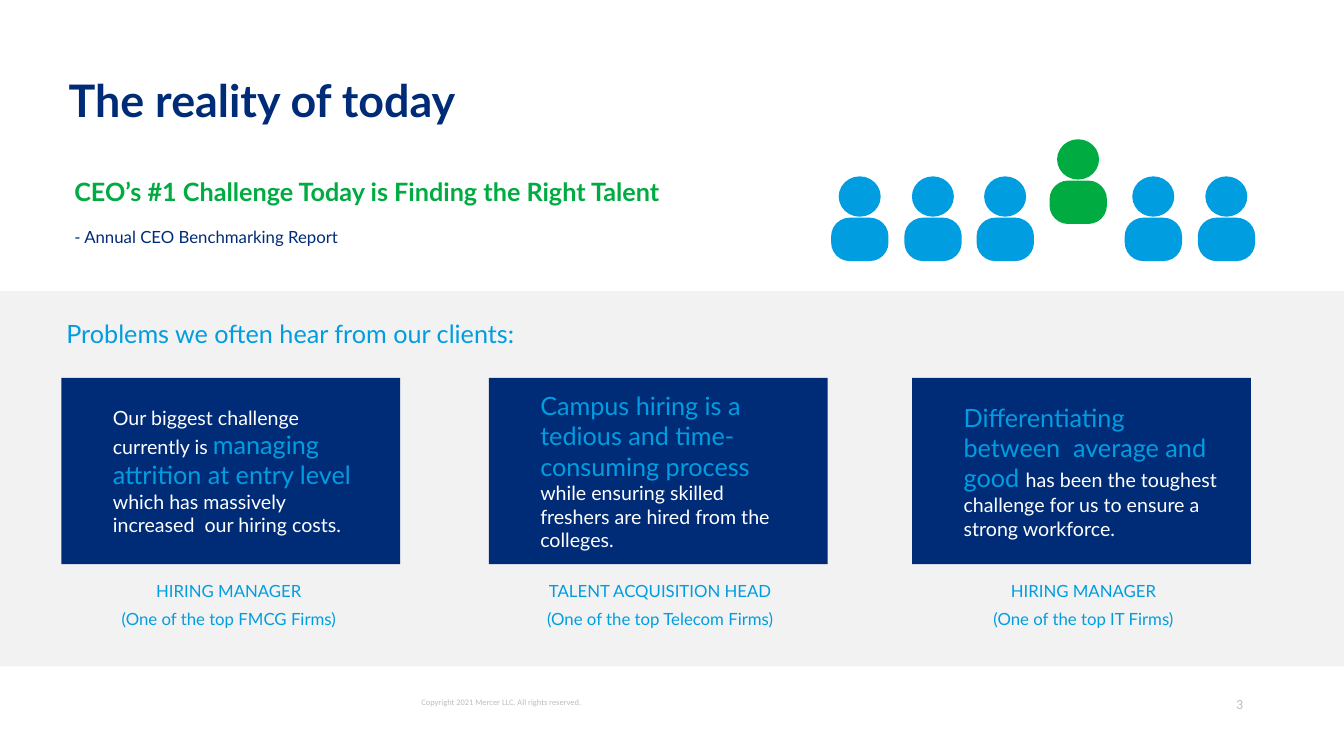
from pptx import Presentation
from pptx.dml.color import RGBColor
from pptx.enum.shapes import MSO_SHAPE
from pptx.enum.text import MSO_ANCHOR, PP_ALIGN
from pptx.util import Pt

RECT, ROUND, OVAL = MSO_SHAPE.RECTANGLE, MSO_SHAPE.ROUNDED_RECTANGLE, MSO_SHAPE.OVAL
TOP, MIDDLE = MSO_ANCHOR.TOP, MSO_ANCHOR.MIDDLE
LEFT, CENTER, RIGHT = PP_ALIGN.LEFT, PP_ALIGN.CENTER, PP_ALIGN.RIGHT


class Theme:
    navy, blue, green = "002C77", "009DE0", "00AC41"
    white, pale, grey = "FFFFFF", "F2F2F2", "B9BFC7"
    title, lead, body, label, page, legal = 32, 18, 14, 12, 10, 6
    font, small = "Lato", "Calibri"


def block(shapes, kind, box, color):
    shape = shapes.add_shape(kind, *map(Pt, box))
    shape.shadow.inherit = False
    shape.fill.solid()
    shape.fill.fore_color.rgb = RGBColor.from_string(color)
    shape.line.fill.background()
    return shape


def write(shape, paras, align=LEFT, gap=0, inset=(7.2, 3.6, 7.2, 3.6),
          anchor=TOP, font=Theme.font):
    """Fill a shape with paragraphs, each a list of (text, size, color, bold) runs."""
    frame = shape.text_frame
    frame.word_wrap = True
    frame.vertical_anchor = anchor
    frame.margin_left, frame.margin_top, frame.margin_right, frame.margin_bottom = map(Pt, inset)
    for i, runs in enumerate(paras):
        para = frame.add_paragraph() if i else frame.paragraphs[0]
        para.alignment = align
        para.space_before = Pt(gap if i else 0)
        for text, size, color, bold in runs:
            run = para.add_run()
            run.text = text
            run.font.name = font
            run.font.size = Pt(size)
            run.font.bold = bold
            run.font.color.rgb = RGBColor.from_string(color)


deck = Presentation()
deck.slide_width, deck.slide_height = Pt(960), Pt(540)
slide = deck.slides.add_slide(deck.slide_layouts[5])
shapes = slide.shapes
flush = (0, 0, 0, 0)

# Grey band and title
block(shapes, RECT, (0, 208, 960, 268), Theme.pale)
title = shapes.title
title.left, title.top, title.width, title.height = Pt(49), Pt(54), Pt(336), Pt(37)
write(title, [[("The reality of today", Theme.title, Theme.navy, True)]], inset=flush)
title.text_frame.paragraphs[0].line_spacing = Pt(36)

# Headings
claim = shapes.add_textbox(Pt(46), Pt(122.4), Pt(497.5), Pt(86))
write(claim, [
    [("CEO’s #1 Challenge Today is Finding the Right Talent", Theme.lead, Theme.green, True)],
    [("- Annual CEO Benchmarking Report", Theme.label, Theme.navy, False)],
], gap=14.4)
intro = shapes.add_textbox(Pt(40.3), Pt(224), Pt(389), Pt(22))
write(intro, [[("Problems we often hear from our clients:", Theme.lead, Theme.blue, False)]])

# Quotes: card left, caption left, runs (text, stressed), role, firm
quotes = [
    (43.9, 42.5,
     [("Our biggest challenge currently is ", False),
      ("managing attrition at entry level ", True),
      ("which has massively increased  our hiring costs.", False)],
     "HIRING MANAGER", "(One of the top FMCG Firms)"),
    (349.2, 350.6,
     [("Campus hiring is a tedious and time-consuming process ", True),
      ("while ensuring skilled freshers are hired from the colleges.", False)],
     "TALENT ACQUISITION HEAD", "(One of the top Telecom Firms)"),
    (651.6, 653,
     [("Differentiating between  average and good ", True),
      ("has been the toughest challenge for us to ensure a strong workforce.", False)],
     "HIRING MANAGER", "(One of the top IT Firms)"),
]
for left, under, parts, role, firm in quotes:
    card = block(shapes, RECT, (left, 270, 242, 133), Theme.navy)
    runs = [(text, Theme.lead, Theme.blue, False) if key
            else (text, Theme.body, Theme.white, False) for text, key in parts]
    write(card, [runs], inset=(36.7, 3.6, 22.3, 3.6), anchor=MIDDLE)
    label = shapes.add_textbox(Pt(under), Pt(411), Pt(242), Pt(67))
    write(label, [[(text, Theme.label, Theme.blue, False)] for text in (role, firm)],
          align=CENTER, gap=6)

# Row of people, with one standing out
crowd = shapes.add_group_shape()
for i, left in enumerate((593.7, 646, 697.6, 749.7, 803.4, 855.6)):
    top, color = (99.5, Theme.green) if i == 3 else (126, Theme.blue)
    block(crowd.shapes, OVAL, (left + 5.4, top, 30, 28.8), color)
    torso = block(crowd.shapes, ROUND, (left, top + 29.5, 41, 31), color)
    torso.adjustments[0] = 0.43

# Footer
legal = shapes.add_textbox(Pt(301), Pt(499), Pt(135), Pt(10))
write(legal, [[("Copyright 2021 Mercer LLC. All rights reserved.", Theme.legal, Theme.grey, False)]],
      inset=flush, font=Theme.small)
legal.text_frame.paragraphs[0].line_spacing = 0.9
page = shapes.add_textbox(Pt(862), Pt(497), Pt(26), Pt(12))
write(page, [[("3", Theme.page, Theme.grey, False)]], align=RIGHT, inset=flush, font=Theme.small)

deck.save("out.pptx")
